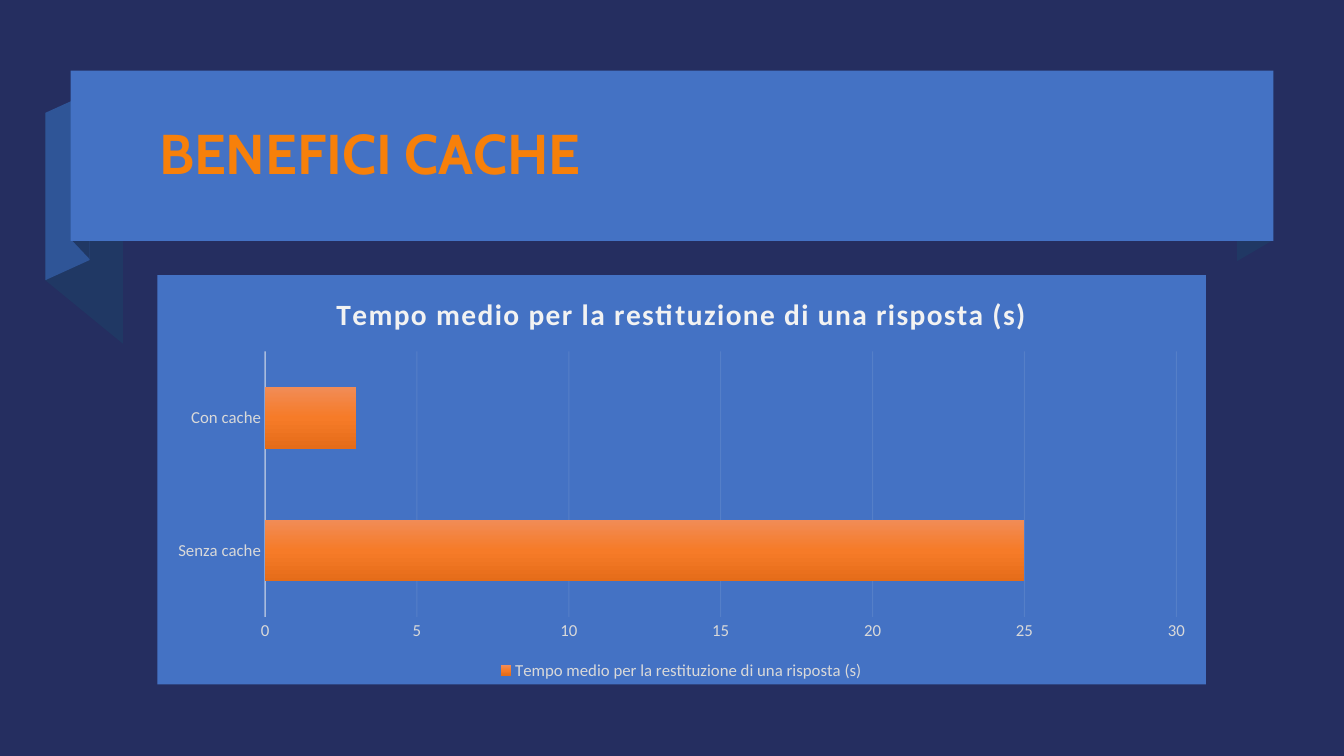
from lxml import etree
from pptx import Presentation
from pptx.chart.data import CategoryChartData
from pptx.dml.color import RGBColor
from pptx.enum.chart import XL_CHART_TYPE, XL_LEGEND_POSITION, XL_TICK_MARK
from pptx.enum.shapes import MSO_SHAPE
from pptx.enum.text import MSO_ANCHOR
from pptx.oxml import parse_xml
from pptx.oxml.ns import nsdecls, qn
from pptx.util import Inches, Pt

BAR = XL_CHART_TYPE.BAR_CLUSTERED
BOTTOM = XL_LEGEND_POSITION.BOTTOM
NO_TICK = XL_TICK_MARK.NONE
MIDDLE = MSO_ANCHOR.MIDDLE
RECT = MSO_SHAPE.RECTANGLE

NAVY = RGBColor(0x25, 0x2E, 0x60)
BLUE = RGBColor(0x44, 0x72, 0xC4)
MID = RGBColor(0x2F, 0x55, 0x97)
DARK = RGBColor(0x20, 0x38, 0x64)
ORANGE = RGBColor(0xF7, 0x80, 0x0A)
PALE = RGBColor(0xF2, 0xF2, 0xF2)
GREY = RGBColor(0xD9, 0xD9, 0xD9)
SHADES = ((0, RGBColor(0xF1, 0x8C, 0x57)),
          (50, RGBColor(0xF6, 0x7B, 0x28)),
          (100, RGBColor(0xE5, 0x6C, 0x19)))

CELL = 0.1  # inches per grid column and row
LABEL = {"name": "Calibri", "size": Pt(12)}
HEAD = {"name": "Calibri", "size": Pt(21), "bold": True}
TITLE = {"name": "Cabin", "size": Pt(40), "bold": True}
TOPIC = "Tempo medio per la restituzione di una risposta (s)"

# left, right, top at left, top at right, drop, colour
FOLDS = (
    (122.7, 126.3, 9.1, 7, 16.8, DARK),
    (4.5, 12.2, 11.2, 17.5, 16.6, DARK),
    (4.5, 8.9, 11.2, 9.2, 16.6, MID),
    (7.1, 8.9, 7, 8.9, 16.8, DARK),
)


def grid(*cells):
    return [Inches(cell * CELL) for cell in cells]


def style(target, values):
    for key, value in values.items():
        setattr(target, key, value)


def set_font(font, values, color):
    style(font, values)
    font.color.rgb = color


def paint(shape, color):
    shape.fill.solid()
    shape.fill.fore_color.rgb = color
    shape.line.fill.background()
    shape.shadow.inherit = False


def add_fold(slide, left, right, start, end, drop, color):
    """Draw a slanted ribbon side with two upright edges."""
    points = [tuple(grid(*point)) for point in (
        (left, start), (right, end), (right, end + drop), (left, start + drop))]
    pen = slide.shapes.build_freeform(*points[0])
    pen.add_line_segments(points[1:])
    paint(pen.convert_to_shape(), color)


def add_title(slide, text):
    box = slide.shapes.add_textbox(*grid(14.8, 8.3, 109.4, 14.5))
    frame = box.text_frame
    style(frame, {"word_wrap": True, "vertical_anchor": MIDDLE})
    para = frame.paragraphs[0]
    para.line_spacing = 0.9
    run = para.add_run()
    run.text = text
    set_font(run.font, TITLE, ORANGE)


def set_line(line, width, opacity):
    line.width = Pt(width)
    line.color.rgb = PALE
    tone = line.fill._xPr.find(".//" + qn("a:srgbClr"))
    etree.SubElement(tone, qn("a:alpha")).set("val", str(opacity * 1000))


def shade(series):
    """Fill the bars with a gradient running from top to bottom."""
    stops = "".join(
        f'<a:gs pos="{place * 1000}"><a:srgbClr val="{color}"/></a:gs>'
        for place, color in SHADES)
    props = series.format.fill._xPr
    props.insert(0, parse_xml(
        f'<a:gradFill {nsdecls("a")} rotWithShape="1"><a:gsLst>{stops}</a:gsLst>'
        '<a:lin ang="5400000" scaled="0"/></a:gradFill>'))


def fill_chart(chart):
    """Colour the whole chart area."""
    area = parse_xml(
        f'<c:spPr {nsdecls("c", "a")}><a:solidFill><a:srgbClr val="{BLUE}"/>'
        '</a:solidFill><a:ln><a:noFill/></a:ln></c:spPr>')
    chart._chartSpace.find(qn("c:chart")).addnext(area)


def set_head(chart):
    chart.has_title = True
    run = chart.chart_title.text_frame.paragraphs[0].add_run()
    run.text = TOPIC
    set_font(run.font, HEAD, PALE)
    run.font._rPr.set("spc", "100")
    chart.chart_title.include_in_layout = False


def set_axes(chart):
    cats, vals = chart.category_axis, chart.value_axis
    for axis in (cats, vals):
        style(axis, {"major_tick_mark": NO_TICK, "minor_tick_mark": NO_TICK})
        set_font(axis.tick_labels.font, LABEL, GREY)
    set_line(cats.format.line, 1, 54)
    style(vals, {"minimum_scale": 0, "maximum_scale": 30, "major_unit": 5})
    vals.format.line.fill.background()
    set_line(vals.major_gridlines.format.line, 0.75, 10)


def add_bars(slide):
    data = CategoryChartData()
    data.categories = ["Senza cache", "Con cache"]
    data.add_series(TOPIC, (25, 3))
    chart = slide.shapes.add_chart(BAR, *grid(15.6, 27.3, 104, 40.6), data).chart
    set_font(chart.font, LABEL, GREY)
    fill_chart(chart)
    set_head(chart)
    set_axes(chart)
    chart.has_legend = True
    style(chart.legend, {"position": BOTTOM, "include_in_layout": False})
    set_font(chart.legend.font, LABEL, GREY)
    plot = chart.plots[0]
    style(plot, {"gap_width": 115, "overlap": -20, "vary_by_categories": False})
    shade(plot.series[0])


def main():
    deck = Presentation()
    deck.slide_width, deck.slide_height = grid(133.3, 75)
    slide = deck.slides.add_slide(deck.slide_layouts[6])
    slide.background.fill.solid()
    slide.background.fill.fore_color.rgb = NAVY
    for fold in FOLDS:
        add_fold(slide, *fold)
    paint(slide.shapes.add_shape(RECT, *grid(7, 7, 119.3, 16.9)), BLUE)
    add_title(slide, "BENEFICI CACHE")
    add_bars(slide)
    deck.save("out.pptx")


if __name__ == "__main__":
    main()
